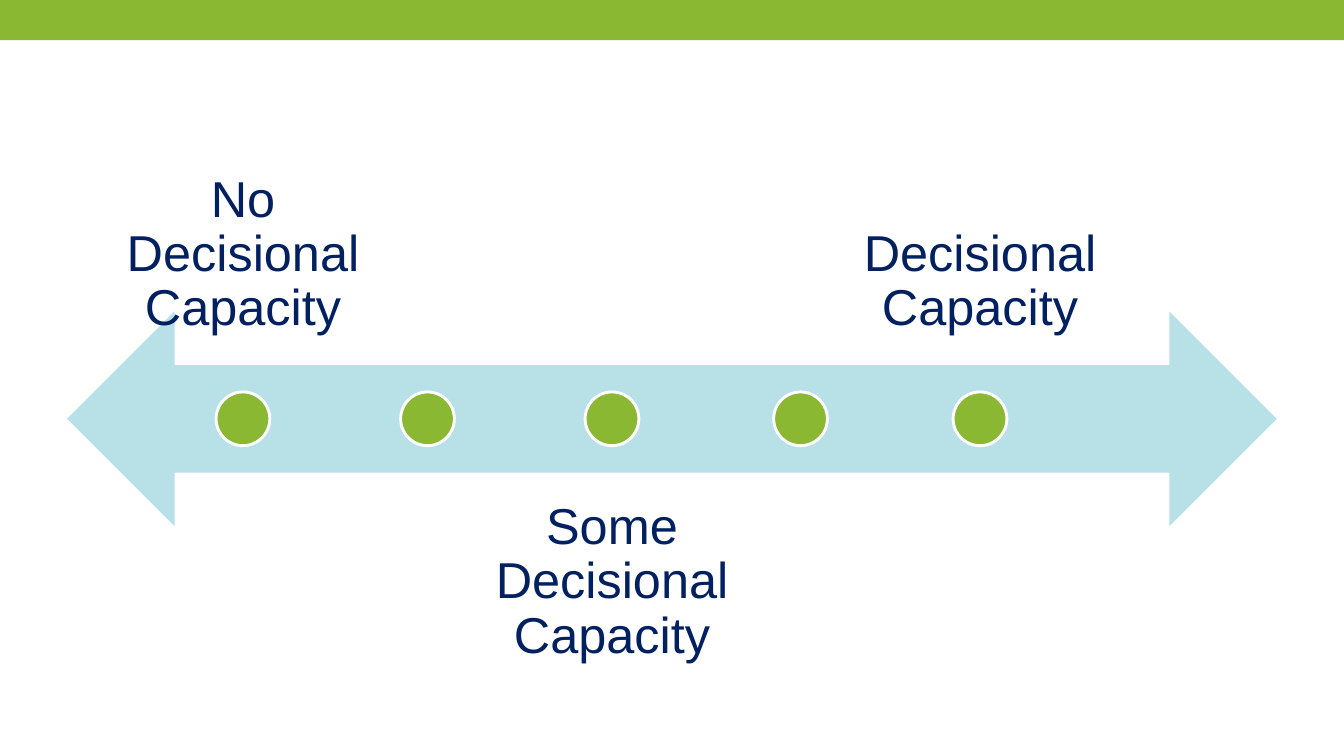
"""Build a slide showing decisional capacity as a continuum on a two-way arrow."""
import dataclasses

import pptx
import pptx.dml.color
import pptx.enum.shapes
import pptx.enum.text
import pptx.util

Inches = pptx.util.Inches
Points = pptx.util.Pt
Shapes = pptx.enum.shapes.MSO_SHAPE
Anchor = pptx.enum.text.MSO_ANCHOR

STAGES = [
    {"center": 2.41, "label": "No Decisional Capacity", "above": True},
    {"center": 4.24},
    {"center": 6.07, "label": "Some Decisional Capacity", "above": False},
    {"center": 7.94},
    {"center": 9.72, "label": "Decisional Capacity", "above": True},
]


@dataclasses.dataclass(frozen=True)
class Theme:
    green: str = "8AB833"
    arrow: str = "B7E1E7"
    outline: str = "FFFFFF"
    text: str = "002060"
    font: str = "Arial"
    label_size: float = 36
    outline_width: float = 2.08


THEME = Theme()
SLIDE_WIDTH, SLIDE_HEIGHT = 13.33, 7.5
BANNER_HEIGHT = 0.4
DIAGRAM_WIDTH, DIAGRAM_HEIGHT = SLIDE_WIDTH * 0.9, 5.33
DIAGRAM_LEFT = (SLIDE_WIDTH - DIAGRAM_WIDTH) / 2
DIAGRAM_TOP = 1.49
ROW_HEIGHT = DIAGRAM_HEIGHT * 0.4
ARROW_TOP = DIAGRAM_TOP + DIAGRAM_HEIGHT * 0.3
LABEL_WIDTH = DIAGRAM_WIDTH * 0.29
LABEL_INSET = 0.28
DOT_SIZE = ROW_HEIGHT / 4
DOT_TOP = ARROW_TOP + (ROW_HEIGHT - DOT_SIZE) / 2


def color(value):
    return pptx.dml.color.RGBColor.from_string(value)


def add_filled_shape(slide, kind, box, fill, outline=None):
    shape = slide.shapes.add_shape(kind, *map(Inches, box))
    shape.shadow.inherit = False
    shape.fill.solid()
    shape.fill.fore_color.rgb = color(fill)
    if outline:
        shape.line.color.rgb = color(outline)
        shape.line.width = Points(THEME.outline_width)
    else:
        shape.line.fill.background()


def add_label(slide, stage):
    top = DIAGRAM_TOP if stage["above"] else DIAGRAM_TOP + DIAGRAM_HEIGHT - ROW_HEIGHT
    box = (stage["center"] - LABEL_WIDTH / 2, top, LABEL_WIDTH, ROW_HEIGHT)
    frame = slide.shapes.add_textbox(*map(Inches, box)).text_frame
    frame.word_wrap = True
    frame.vertical_anchor = Anchor.BOTTOM if stage["above"] else Anchor.TOP
    frame.margin_left = frame.margin_right = Inches(LABEL_INSET)
    frame.margin_top = frame.margin_bottom = Inches(LABEL_INSET)
    paragraph = frame.paragraphs[0]
    paragraph.alignment = pptx.enum.text.PP_ALIGN.CENTER
    paragraph.line_spacing = 0.9
    run = paragraph.add_run()
    run.text = stage["label"]
    run.font.name = THEME.font
    run.font.size = Points(THEME.label_size)
    run.font.color.rgb = color(THEME.text)


def main():
    presentation = pptx.Presentation()
    presentation.slide_width = Inches(SLIDE_WIDTH)
    presentation.slide_height = Inches(SLIDE_HEIGHT)
    slide = presentation.slides.add_slide(presentation.slide_layouts[6])

    banner = (0, 0, SLIDE_WIDTH, BANNER_HEIGHT)
    add_filled_shape(slide, Shapes.RECTANGLE, banner, THEME.green)
    arrow = (DIAGRAM_LEFT, ARROW_TOP, DIAGRAM_WIDTH, ROW_HEIGHT)
    add_filled_shape(slide, Shapes.LEFT_RIGHT_ARROW, arrow, THEME.arrow)
    for stage in STAGES:
        if "label" in stage:
            add_label(slide, stage)
        dot = (stage["center"] - DOT_SIZE / 2, DOT_TOP, DOT_SIZE, DOT_SIZE)
        add_filled_shape(slide, Shapes.OVAL, dot, THEME.green, THEME.outline)

    presentation.save("out.pptx")


if __name__ == "__main__":
    main()
